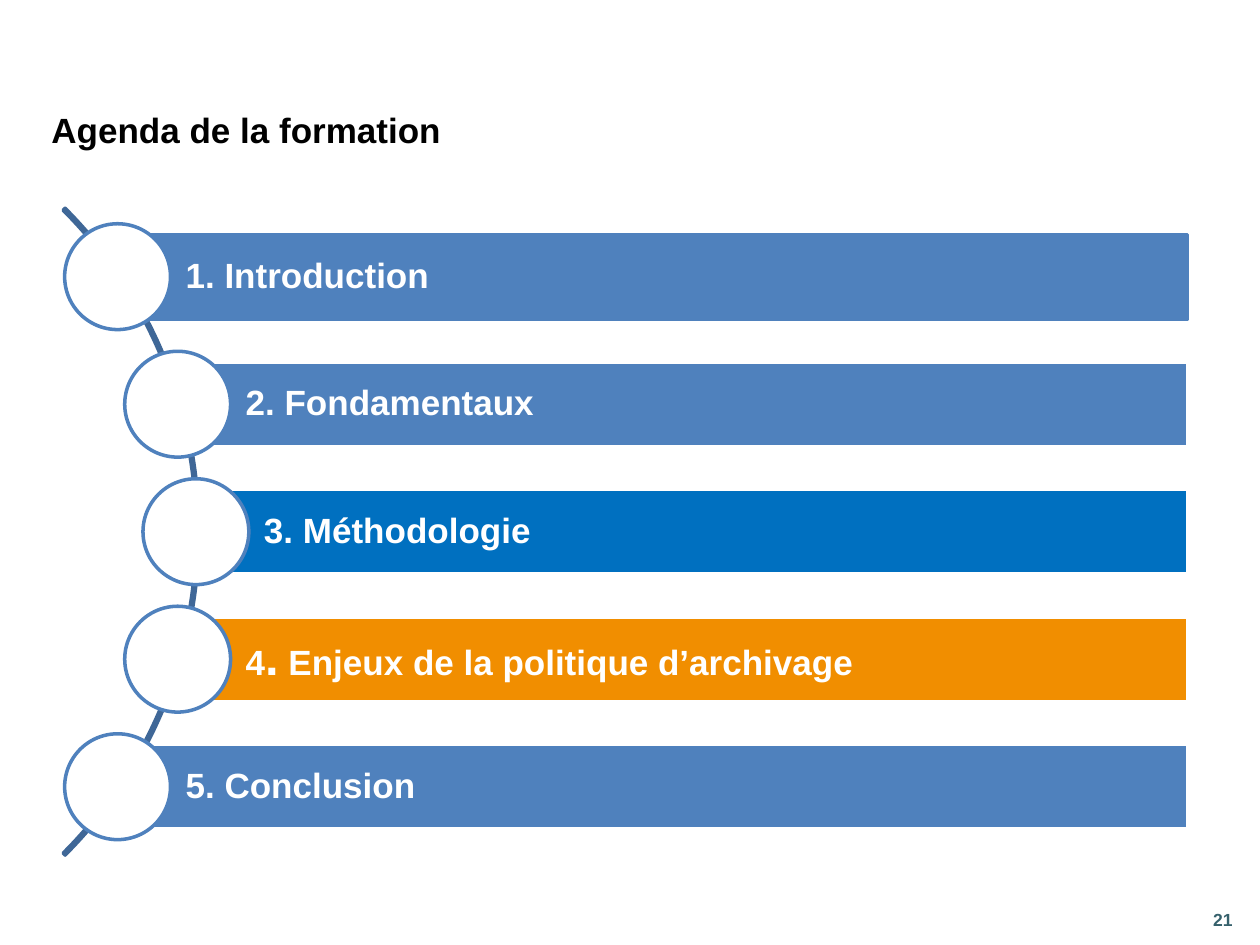
from dataclasses import dataclass
from math import sqrt

from pptx import Presentation
from pptx.dml.color import RGBColor as Rgb
from pptx.enum.shapes import MSO_SHAPE as Kind
from pptx.enum.text import MSO_ANCHOR as Anchor, PP_ALIGN as Align
from pptx.util import Inches, Pt


@dataclass(frozen=True)
class Theme:
    font: str = "Arial"
    white: str = "FFFFFF"
    black: str = "000000"
    blue: str = "4F81BD"
    deep: str = "0070C0"
    gold: str = "F18E00"
    arc: str = "3F6797"
    page: str = "36616C"
    small: int = 10
    body: int = 20
    dot: int = 28
    line: int = 2


class Deck:
    """Holds the theme and the slide; lengths are cells of a 100 x 75 grid."""

    cols, rows = 100, 75

    def __init__(self, theme):
        self.theme = theme
        self.prs = Presentation()
        self.prs.slide_width, self.prs.slide_height = Inches(10), Inches(7.5)
        self.slide = self.prs.slides.add_slide(self.prs.slide_layouts[6])

    def place(self, x, y, w, h):
        col = self.prs.slide_width / self.cols
        row = self.prs.slide_height / self.rows
        return [round(n) for n in (x * col, y * row, w * col, h * row)]

    def shape(self, kind, box, fill, line):
        item = self.slide.shapes.add_shape(kind, *self.place(*box))
        item.shadow.inherit = False
        if fill:
            item.fill.solid()
            item.fill.fore_color.rgb = Rgb.from_string(fill)
        else:
            item.fill.background()
        item.line.color.rgb = Rgb.from_string(line)
        item.line.width = Pt(self.theme.line)
        return item

    def put_text(self, frame, runs, color, **form):
        """Fill a frame with one paragraph of (text, size) runs."""
        form = {"word_wrap": True, "vertical_anchor": Anchor.MIDDLE, **form}
        for name, value in form.items():
            setattr(frame, name, value)
        para = frame.paragraphs[0]
        para.alignment = Align.LEFT
        for text, size in runs:
            run = para.add_run()
            run.text = text
            style = {"name": self.theme.font, "size": Pt(size), "bold": True}
            for name, value in style.items():
                setattr(run.font, name, value)
            run.font.color.rgb = Rgb.from_string(color)
        return para

    def label(self, box, text, size, color):
        item = self.slide.shapes.add_textbox(*self.place(*box))
        self.put_text(item.text_frame, [(text, size)], color)

    def bar(self, box, runs, fill, line):
        item = self.shape(Kind.RECTANGLE, box, fill, line)
        pad = Inches(0.06)
        para = self.put_text(item.text_frame, runs, self.theme.white,
                             margin_left=Inches(0.54), margin_right=pad,
                             margin_top=pad, margin_bottom=pad)
        para.line_spacing = 0.9

    def ring(self, x, y, size):
        box = (x - size / 2, y - size / 2, size, size)
        self.shape(Kind.OVAL, box, self.theme.white, self.theme.blue)

    def curve(self, x, y, size):
        box = (x - size / 2, y - size / 2, size, size)
        item = self.shape(Kind.BLOCK_ARC, box, None, self.theme.arc)
        for i, value in enumerate((189, 27, 0.003)):
            item.adjustments[i] = value

    def save(self):
        self.prs.save("out.pptx")


def main():
    look = Theme()
    deck = Deck(look)

    # Page number and title
    deck.label((95.3, 71, 4.7, 4), "21", look.small, look.page)
    deck.label((3.1, 7.8, 95.5, 4.9), "Agenda de la formation", look.body, look.black)

    # Arc that carries the rings
    mid_x, mid_y = -20.5, 42.2
    deck.curve(mid_x, mid_y, 72.6)

    # Agenda rows: the ring centres follow the arc
    size = look.body
    agenda = [
        ([("1. Introduction", size)], look.blue, look.blue),
        ([("2. Fondamentaux", size)], look.blue, look.white),
        ([("3. Méthodologie", size)], look.deep, look.white),
        ([("4", size), (".", look.dot),
          (" Enjeux de la politique d’archivage", size)], look.gold, look.white),
        ([("5. Conclusion", size)], look.blue, look.white),
    ]
    step, reach, right, tall = 10.12, 36.05, 94.25, 6.7
    for i, (runs, fill, line) in enumerate(agenda):
        drop = (i - len(agenda) // 2) * step
        x, y = mid_x + sqrt(reach ** 2 - drop ** 2), mid_y + drop
        deck.bar((x, y - tall / 2, right - x, tall), runs, fill, line)
        deck.ring(x, y, 8.4)

    deck.save()


if __name__ == "__main__":
    main()
